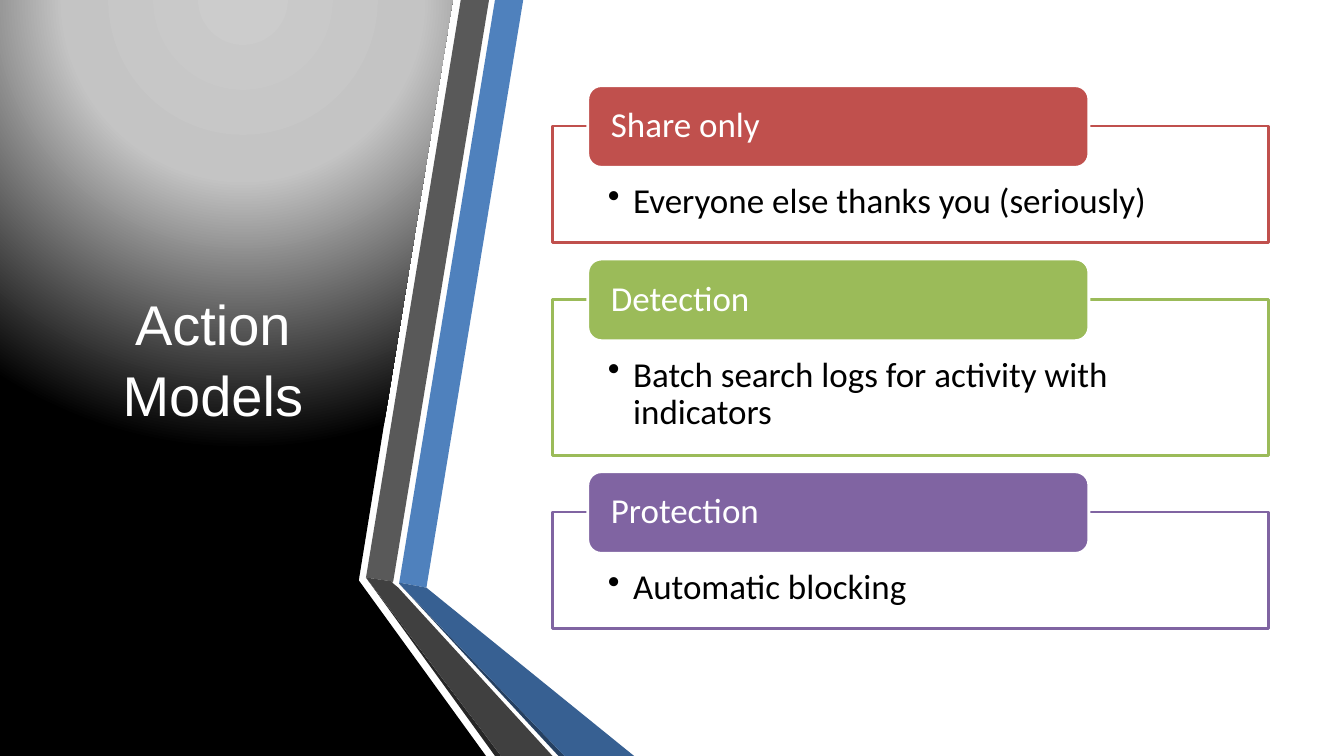
from dataclasses import dataclass

from pptx import Presentation
from pptx.dml.color import RGBColor
from pptx.enum.shapes import MSO_SHAPE
from pptx.enum.text import MSO_ANCHOR, PP_ALIGN
from pptx.oxml import parse_xml
from pptx.oxml.ns import nsdecls, qn
from pptx.shapes.autoshape import Shape
from pptx.slide import Slide
from pptx.util import Inches, Pt

RECT = MSO_SHAPE.RECTANGLE
ROUND = MSO_SHAPE.ROUNDED_RECTANGLE
TOP, MIDDLE = MSO_ANCHOR.TOP, MSO_ANCHOR.MIDDLE
LEFT, CENTER = PP_ALIGN.LEFT, PP_ALIGN.CENTER

WHITE = RGBColor(0xFF, 0xFF, 0xFF)
BLACK = RGBColor(0, 0, 0)
RED = RGBColor(0xC0, 0x50, 0x4D)
GREEN = RGBColor(0x9B, 0xBB, 0x59)
PURPLE = RGBColor(0x80, 0x64, 0xA2)
BLUE = RGBColor(0x4F, 0x81, 0xBD)
MID_BLUE = RGBColor(0x37, 0x60, 0x92)
DARK_BLUE = RGBColor(0x25, 0x40, 0x61)
GRAY = RGBColor(0x59, 0x59, 0x59)
DARK_GRAY = RGBColor(0x40, 0x40, 0x40)
DEEP_GRAY = RGBColor(0x26, 0x26, 0x26)

Points = list[tuple[float, float]]
Box = tuple[float, float, float, float]


@dataclass
class Band:
    points: Points
    color: RGBColor


@dataclass
class Model:
    name: str
    note: str
    color: RGBColor
    height: float


PANEL = Band([(0, 0), (4.49, 0), (3.56, 5.75), (3.56, 5.76),
              (4.82, 7.5), (0, 7.5)], BLACK)
BANDS = [
    Band([(3.96, 5.78), (4.23, 5.83), (5.19, 0), (4.91, 0)], BLUE),
    Band([(4.85, 0), (4.57, 0), (3.63, 5.73), (3.9, 5.77)], GRAY),
    Band([(3.63, 5.73), (4.91, 7.5), (4.97, 7.5)], DEEP_GRAY),
    Band([(3.96, 5.79), (5.54, 7.5), (5.6, 7.5)], DARK_BLUE),
    Band([(3.96, 5.79), (5.6, 7.5), (6.29, 7.5), (4.23, 5.83),
          (3.96, 5.78)], MID_BLUE),
    Band([(5.48, 7.5), (3.95, 5.83), (3.89, 5.78), (3.9, 5.77),
          (3.63, 5.73), (4.97, 7.5)], DARK_GRAY),
]
MODELS = [
    Model("Share only", "Everyone else thanks you (seriously)", RED, 1.16),
    Model("Detection", "Batch search logs for activity with indicators",
          GREEN, 1.55),
    Model("Protection", "Automatic blocking", PURPLE, 1.16),
]
FIRST_TOP, GAP, TAB_RISE = 1.25, 0.56, 0.4


def draw_band(slide: Slide, band: Band) -> Shape:
    points = [(Inches(x), Inches(y)) for x, y in band.points]
    pen = slide.shapes.build_freeform(*points[0])
    pen.add_line_segments(points[1:], close=True)
    shape = pen.convert_to_shape()
    shape.shadow.inherit = False
    shape.fill.solid()
    shape.fill.fore_color.rgb = band.color
    shape.line.fill.background()
    return shape


def add_glow(shape: Shape) -> None:
    stops = [(0, "CCCCCC"), (40, "C4C4C4"), (100, "000000")]
    marks = "".join(f'<a:gs pos="{pos * 1000}"><a:srgbClr val="{color}"/></a:gs>'
                    for pos, color in stops)
    glow = parse_xml(
        f'<a:gradFill {nsdecls("a")}><a:gsLst>{marks}</a:gsLst>'
        '<a:path path="circle"><a:fillToRect l="50000" t="-80000" '
        'r="50000" b="180000"/></a:path></a:gradFill>')
    props = shape._element.spPr
    props.replace(props.find(qn("a:solidFill")), glow)


def add_text(shape: Shape, text: str, size: float, font: str,
             color: RGBColor, align: PP_ALIGN, space: float) -> None:
    para = shape.text_frame.paragraphs[0]
    para.alignment = align
    para.line_spacing = space
    run = para.add_run()
    run.text = text
    run.font.size = Pt(size)
    run.font.name = font
    run.font.color.rgb = color


def draw_box(slide: Slide, kind: MSO_SHAPE, box: Box, fill: RGBColor,
             line: RGBColor, inset: Box, anchor: MSO_ANCHOR) -> Shape:
    shape = slide.shapes.add_shape(kind, *map(Inches, box))
    shape.shadow.inherit = False
    shape.fill.solid()
    shape.fill.fore_color.rgb = fill
    shape.line.color.rgb = line
    shape.line.width = Pt(2)
    frame = shape.text_frame
    frame.word_wrap = True
    frame.vertical_anchor = anchor
    (frame.margin_left, frame.margin_top,
     frame.margin_right, frame.margin_bottom) = map(Inches, inset)
    return shape


def add_bullet(shape: Shape) -> None:
    props = shape.text_frame.paragraphs[0]._p.get_or_add_pPr()
    props.set("marL", str(Inches(0.25)))
    props.set("indent", str(-Inches(0.25)))
    props.append(parse_xml(f'<a:buChar {nsdecls("a")} char="•"/>'))


def draw_model(slide: Slide, model: Model, top: float) -> None:
    body = draw_box(slide, RECT, (5.48, top, 7.1, model.height), WHITE,
                    model.color, (0.55, 0.57, 0.55, 0.19), TOP)
    tint = body._element.spPr.find(qn("a:solidFill"))[0]
    tint.append(parse_xml(f'<a:alpha {nsdecls("a")} val="90000"/>'))
    add_bullet(body)
    add_text(body, model.note, 25, "Calibri", BLACK, LEFT, 0.9)
    tab = draw_box(slide, ROUND, (5.83, top - TAB_RISE, 4.97, 0.81),
                   model.color, WHITE, (0.19, 0, 0.19, 0), MIDDLE)
    add_text(tab, model.name, 25, "Calibri", WHITE, LEFT, 0.9)


def draw_title(slide: Slide) -> None:
    title = slide.shapes.title
    title.left, title.top = Inches(0.59), Inches(0.75)
    title.width, title.height = Inches(3.04), Inches(5.58)
    title.text_frame.word_wrap = True
    title.text_frame.vertical_anchor = MIDDLE
    add_text(title, "Action Models", 40, "Arial", WHITE, CENTER, 1.06)
    title._element.getparent().append(title._element)


def main() -> None:
    deck = Presentation()
    deck.slide_width, deck.slide_height = Inches(13.33), Inches(7.5)
    slide = deck.slides.add_slide(deck.slide_layouts[5])
    add_glow(draw_band(slide, PANEL))
    for band in BANDS:
        draw_band(slide, band)
    draw_title(slide)
    top = FIRST_TOP
    for model in MODELS:
        draw_model(slide, model, top)
        top += model.height + GAP
    deck.save("out.pptx")


if __name__ == "__main__":
    main()
